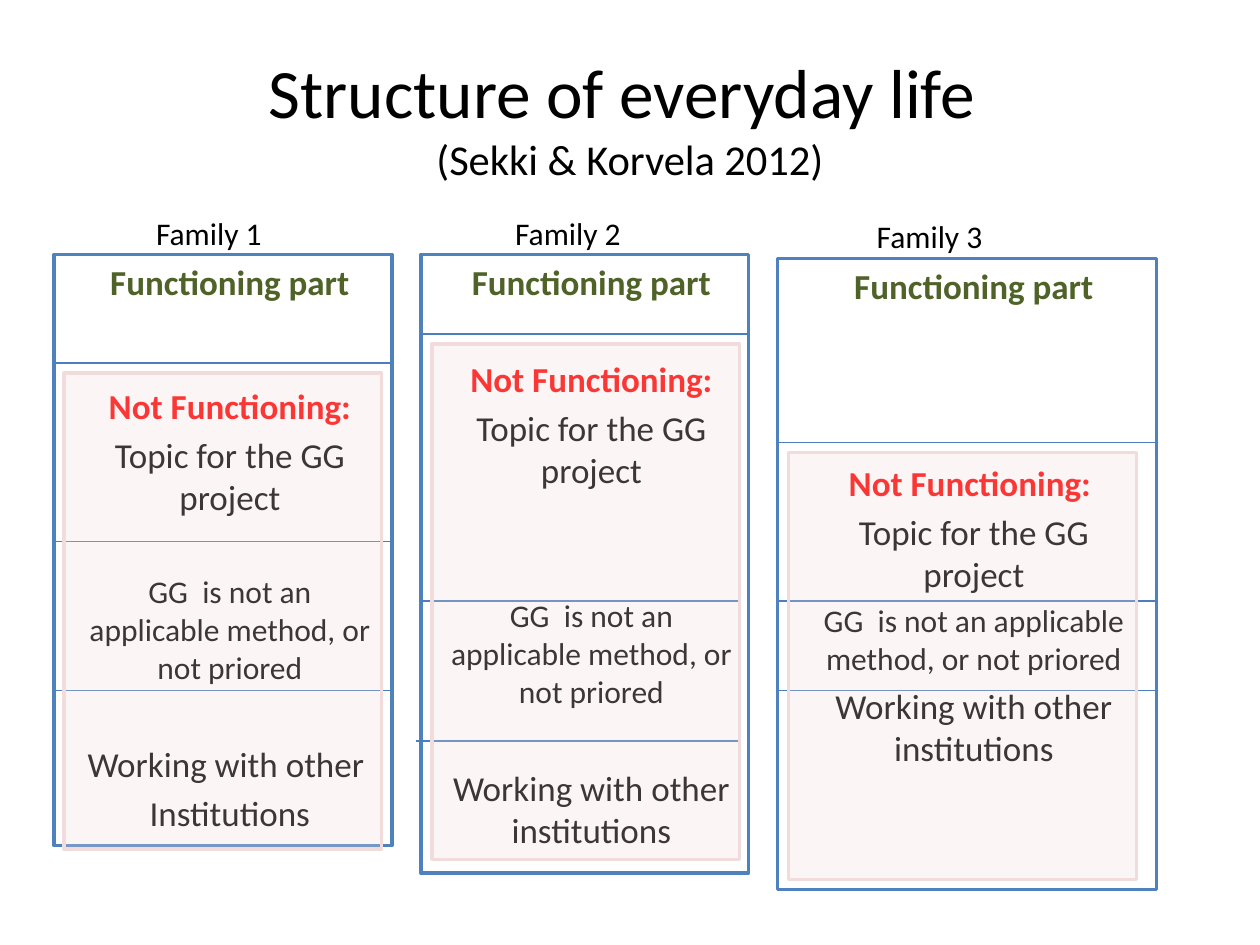
from lxml.etree import SubElement
from pptx import Presentation
from pptx.dml.color import RGBColor
from pptx.enum.shapes import MSO_CONNECTOR, MSO_SHAPE
from pptx.enum.text import MSO_ANCHOR, MSO_AUTO_SIZE, PP_ALIGN
from pptx.oxml.ns import qn
from pptx.util import Inches, Pt

BLUE, DIVIDER, PINK = "4F81BD", "4B7EBC", "F2DCDB"
GREEN, RED, BLACK, WHITE = "4F6228", "FF0000", "000000", "FFFFFF"

FUNCTIONING = ("Functioning part", 20, GREEN, True)
NOT_FUNCTIONING = ("Not Functioning:", 20, RED, True)
NOT_FUNCTIONING_SPACED = ("Not Functioning: ", 20, RED, True)
TOPIC = ("Topic for the GG project", 20, BLACK, False)
NOT_APPLICABLE = ("GG  is not an applicable method, or not priored", 18, BLACK, False)
OTHER_INSTITUTIONS = ("Working with other institutions", 20, BLACK, False)
WORKING_WITH = ("Working with other ", 20, BLACK, False)
INSTITUTIONS = ("Institutions", 20, BLACK, False)

FAMILIES = [
    {
        "name": "Family 1", "box": (0.43, 2.02, 2.68, 4.69), "label": (0.71, -0.37),
        "dividers": [(0.86, 0, 0), (2.28, 0, 0), (3.46, 0, 0)],
        "overlay": (0.08, 0.94, 2.52, 3.78),
        "parts": [(FUNCTIONING, 0), (NOT_FUNCTIONING, 46.5), (TOPIC, 4),
                  (NOT_APPLICABLE, 31.5), (WORKING_WITH, 32.5), (INSTITUTIONS, 4)],
    },
    {
        "name": "Family 2", "box": (3.34, 2.02, 2.6, 4.91), "label": (0.65, -0.37),
        "dividers": [(0.63, 0, 0), (2.75, 0, -0.07), (3.86, -0.04, -0.07)],
        "overlay": (0.09, 0.71, 2.44, 4.09),
        "parts": [(FUNCTIONING, 0), (NOT_FUNCTIONING, 31.5), (TOPIC, 4),
                  (NOT_APPLICABLE, 60), (OTHER_INSTITUTIONS, 32.5)],
    },
    {
        "name": "Family 3", "box": (6.17, 2.05, 3.01, 5.01), "label": (0.69, -0.38),
        "dividers": [(1.46, 0, 0), (2.72, 0.01, 0.01), (3.43, 0, 0)],
        "overlay": (0.09, 1.54, 2.76, 3.39),
        "parts": [(FUNCTIONING, 0), (NOT_FUNCTIONING_SPACED, 88.5), (TOPIC, 4),
                  (NOT_APPLICABLE, 4), (OTHER_INSTITUTIONS, 4)],
    },
]


def color(hex_value):
    return RGBColor.from_string(hex_value)


def place(shape, left, top, width, height):
    shape.left, shape.top = Inches(left), Inches(top)
    shape.width, shape.height = Inches(width), Inches(height)


def paint(shape, fill, line):
    shape.fill.solid()
    shape.fill.fore_color.rgb = color(fill)
    shape.line.color.rgb = color(line)
    shape.line.width = Pt(2)


def add_run(paragraph, text, size, hex_value=BLACK, bold=False):
    run = paragraph.add_run()
    run.text = text
    run.font.name = "Calibri"
    run.font.size = Pt(size)
    run.font.bold = bold
    run.font.color.rgb = color(hex_value)


def add_title(title, box):
    place(title, *box)
    frame = title.text_frame
    frame.auto_size = MSO_AUTO_SIZE.NONE
    frame.vertical_anchor = MSO_ANCHOR.MIDDLE
    paragraph = frame.paragraphs[0]
    paragraph.alignment = PP_ALIGN.CENTER
    add_run(paragraph, "Structure of everyday life ", 39.6)
    paragraph.add_line_break()
    add_run(paragraph, "(Sekki & Korvela 2012)", 24.3)


def fill_parts(shape, parts):
    frame = shape.text_frame
    frame.word_wrap = True
    frame.auto_size = MSO_AUTO_SIZE.NONE
    frame.vertical_anchor = MSO_ANCHOR.TOP
    frame.margin_right = Inches(0.12)
    for index, (part, space) in enumerate(parts):
        paragraph = frame.add_paragraph() if index else frame.paragraphs[0]
        paragraph.alignment = PP_ALIGN.CENTER
        paragraph.space_before = Pt(space)
        properties = paragraph._p.get_or_add_pPr()
        properties.set("marL", str(Inches(0.13)))
        properties.set("indent", "0")
        SubElement(properties, qn("a:buNone"))
        add_run(paragraph, *part)


def add_divider(slide, left, right, top):
    line = slide.shapes.add_connector(
        MSO_CONNECTOR.STRAIGHT, Inches(left), Inches(top), Inches(right), Inches(top))
    line.line.color.rgb = color(DIVIDER)
    line.line.width = Pt(0.75)
    SubElement(line._element.spPr, qn("a:effectLst"))


def add_overlay(slide, left, top, width, height):
    overlay = slide.shapes.add_shape(
        MSO_SHAPE.RECTANGLE, Inches(left), Inches(top), Inches(width), Inches(height))
    overlay.shadow.inherit = False
    paint(overlay, PINK, PINK)
    fill_color = overlay._element.spPr.find(qn("a:solidFill"))[0]
    SubElement(fill_color, qn("a:alpha")).set("val", "25000")


def add_family(slide, family, column):
    left, top, width, height = family["box"]
    place(column, left, top, width, height)
    paint(column, WHITE, BLUE)
    fill_parts(column, family["parts"])

    label_left, label_top = family["label"]
    label = slide.shapes.add_textbox(
        Inches(left + label_left), Inches(top + label_top), Inches(1.18), Inches(0.4))
    label.text_frame.word_wrap = True
    add_run(label.text_frame.paragraphs[0], family["name"], 18)

    for offset, start, end in family["dividers"]:
        add_divider(slide, left + start, left + width + end, top + offset)
    inset_left, inset_top, inner_width, inner_height = family["overlay"]
    add_overlay(slide, left + inset_left, top + inset_top, inner_width, inner_height)


def main():
    presentation = Presentation()
    presentation.slide_width, presentation.slide_height = Inches(10), Inches(7.5)
    slide = presentation.slides.add_slide(presentation.slide_layouts[1])
    add_title(slide.shapes.title, (0.5, 0.3, 9, 1.25))
    for index, family in enumerate(FAMILIES):
        if index == 0:
            column = slide.placeholders[1]
        else:
            column = slide.shapes.add_textbox(0, 0, 0, 0)
        add_family(slide, family, column)
    presentation.save("out.pptx")


if __name__ == "__main__":
    main()
